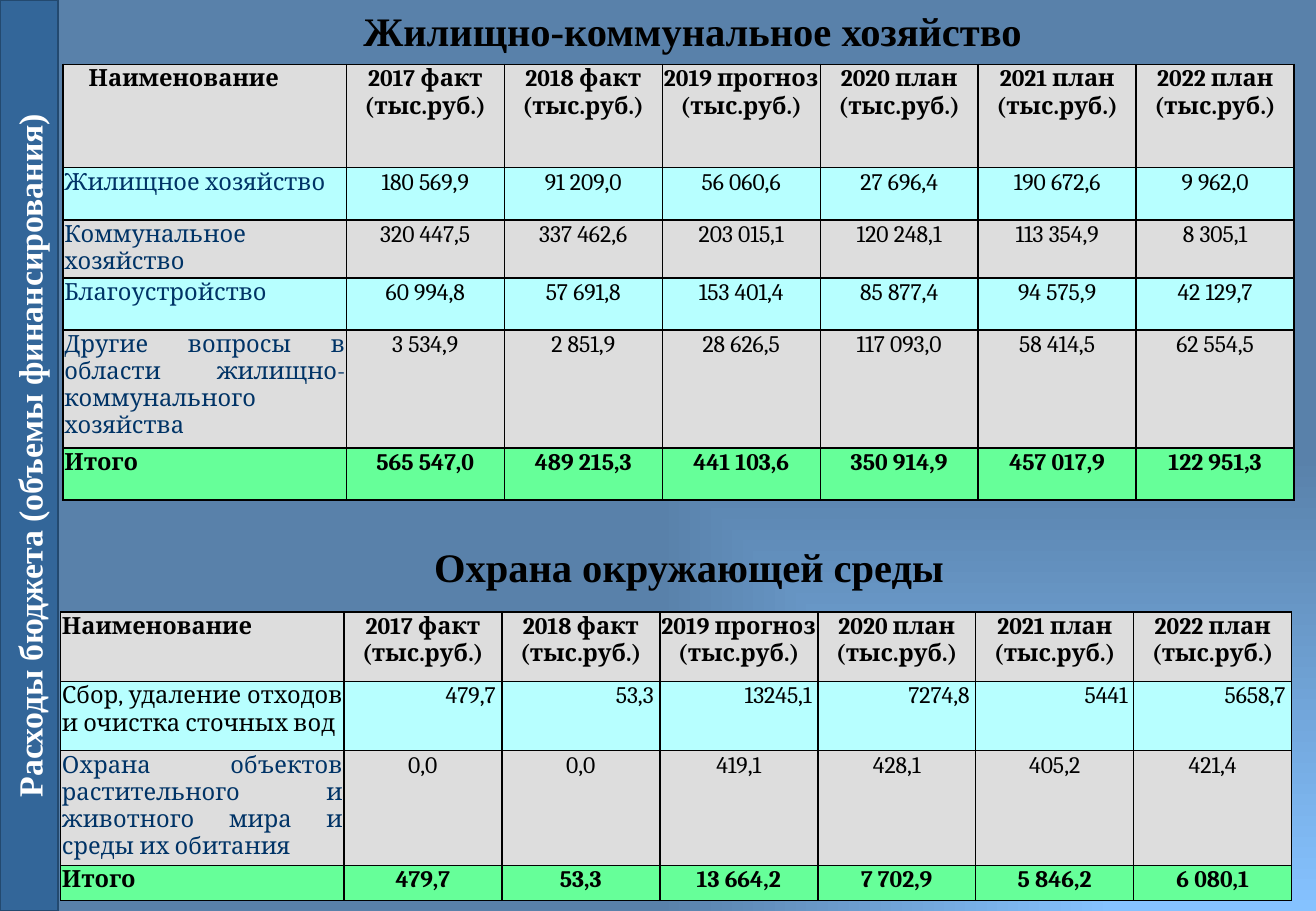
from dataclasses import dataclass

from lxml.etree import SubElement
from pptx import Presentation
from pptx.dml.color import RGBColor
from pptx.enum.shapes import MSO_SHAPE
from pptx.enum.text import MSO_ANCHOR, MSO_AUTO_SIZE, PP_ALIGN
from pptx.oxml import parse_xml
from pptx.oxml.ns import nsdecls, qn
from pptx.slide import Slide
from pptx.table import _Cell
from pptx.text.text import TextFrame
from pptx.util import Inches, Pt


@dataclass(frozen=True)
class Theme:
    heading_font: str = "Times New Roman"
    table_font: str = "Cambria"
    heading_size: int = 24
    sidebar_size: int = 20
    table_size: int = 14
    black: str = "000000"
    white: str = "FFFFFF"
    navy: str = "003366"
    sidebar: str = "336699"
    sidebar_line: str = "23496F"
    gray: str = "DDDDDD"
    cyan: str = "B7FFFF"
    green: str = "66FF99"
    glow: str = "85C2FF"
    backdrop: str = "5981AA"


@dataclass(frozen=True)
class Row:
    height: float
    name: str
    values: list[str]
    name_color: str = Theme.black
    value_align: PP_ALIGN = PP_ALIGN.CENTER


@dataclass(frozen=True)
class Section:
    title: str
    title_left: float
    title_top: float
    table_left: float
    table_top: float
    header_height: float
    header_indent: float
    rows: list[Row]


THEME = Theme()
SLIDE_WIDTH, SLIDE_HEIGHT = 10.83, 7.5
SIDEBAR_WIDTH = 0.48
NAME_WIDTH, VALUE_WIDTH = 2.33, 1.3
CELL_MARGIN, RIGHT_ALIGNED_MARGIN = 0.01, 0.05
PERIODS = ["2017 факт", "2018 факт", "2019 прогноз", "2020 план", "2021 план", "2022 план"]

SECTIONS = [
    Section("Жилищно-коммунальное хозяйство", 0.81, 0, 0.52, 0.53, 0.85, 0.21, [
        Row(0.43, "Жилищное хозяйство",
            ["180 569,9", "91 209,0", "56 060,6", "27 696,4", "190 672,6", "9 962,0"], THEME.navy),
        Row(0.43, "Коммунальное хозяйство",
            ["320 447,5", "337 462,6", "203 015,1", "120 248,1", "113 354,9", "8 305,1"], THEME.navy),
        Row(0.43, "Благоустройство",
            ["60 994,8", "57 691,8", "153 401,4", "85 877,4", "94 575,9", "42 129,7"], THEME.navy),
        Row(0.97, "Другие вопросы в области жилищно-коммунального хозяйства",
            ["3 534,9", "2 851,9", "28 626,5", "117 093,0", "58 414,5", "62 554,5"], THEME.navy),
        Row(0.43, "Итого",
            ["565 547,0", "489 215,3", "441 103,6", "350 914,9", "457 017,9", "122 951,3"]),
    ]),
    Section("Охрана окружающей среды", 0.78, 4.41, 0.5, 5.04, 0.57, CELL_MARGIN, [
        Row(0.57, "Сбор, удаление отходов и очистка сточных вод",
            ["479,7", "53,3", "13245,1", "7274,8", "5441", "5658,7"], value_align=PP_ALIGN.RIGHT),
        Row(0.85, "Охрана объектов растительного и животного мира и среды их обитания",
            ["0,0", "0,0", "419,1", "428,1", "405,2", "421,4"], THEME.navy),
        Row(0.29, "Итого", ["479,7", "53,3", "13 664,2", "7 702,9", "5 846,2", "6 080,1"]),
    ]),
]


def set_text(frame: TextFrame, text: str, font_name: str, size: int, color: str,
             bold: bool, align: PP_ALIGN) -> None:
    frame.text = text
    frame.word_wrap = True
    paragraph = frame.paragraphs[0]
    paragraph.alignment = align
    font = paragraph.runs[0].font
    font.name = font_name
    font.size = Pt(size)
    font.bold = bold
    font.color.rgb = RGBColor.from_string(color)


def set_background(slide: Slide) -> None:
    """Fill the slide with a glow that spreads from its bottom right corner."""
    slide.background.fill.solid()
    properties = slide.background.fill._xPr
    properties.replace(properties.find(qn("a:solidFill")), parse_xml(
        f'<a:gradFill {nsdecls("a")} rotWithShape="1"><a:gsLst>'
        f'<a:gs pos="0"><a:srgbClr val="{THEME.glow}"><a:alpha val="29000"/></a:srgbClr></a:gs>'
        f'<a:gs pos="100000"><a:srgbClr val="{THEME.backdrop}"/></a:gs></a:gsLst>'
        '<a:path path="rect"><a:fillToRect l="100000" t="100000"/></a:path></a:gradFill>'))


def add_sidebar(slide: Slide, text: str) -> None:
    offset = (SLIDE_HEIGHT - SIDEBAR_WIDTH) / 2
    shape = slide.shapes.add_shape(MSO_SHAPE.RECTANGLE, Inches(-offset), Inches(offset),
                                   Inches(SLIDE_HEIGHT), Inches(SIDEBAR_WIDTH))
    shape.rotation = 270
    shape.shadow.inherit = False
    shape.fill.solid()
    shape.fill.fore_color.rgb = RGBColor.from_string(THEME.sidebar)
    shape.line.color.rgb = RGBColor.from_string(THEME.sidebar_line)
    shape.line.width = Pt(1)
    shape.text_frame.vertical_anchor = MSO_ANCHOR.MIDDLE
    set_text(shape.text_frame, text, THEME.heading_font, THEME.sidebar_size, THEME.white,
             True, PP_ALIGN.CENTER)


def add_title(slide: Slide, section: Section) -> None:
    box = slide.shapes.add_textbox(Inches(section.title_left), Inches(section.title_top),
                                   Inches(9.78), Inches(0.5))
    box.text_frame.vertical_anchor = MSO_ANCHOR.MIDDLE
    set_text(box.text_frame, section.title, THEME.heading_font, THEME.heading_size, THEME.black,
             True, PP_ALIGN.CENTER)
    box.text_frame.auto_size = MSO_AUTO_SIZE.SHAPE_TO_FIT_TEXT


def fill_cell(cell: _Cell, text: str, fill: str, color: str, bold: bool, align: PP_ALIGN,
              left_margin: float = CELL_MARGIN) -> None:
    """Write a cell and give it margins, a black border and a fill."""
    right_margin = RIGHT_ALIGNED_MARGIN if align == PP_ALIGN.RIGHT else CELL_MARGIN
    cell.margin_left, cell.margin_right = Inches(left_margin), Inches(right_margin)
    cell.margin_top, cell.margin_bottom = Inches(CELL_MARGIN), 0
    set_text(cell.text_frame, text, THEME.table_font, THEME.table_size, color, bold, align)
    properties = cell._tc.get_or_add_tcPr()
    for side in ("a:lnL", "a:lnR", "a:lnT", "a:lnB"):
        line = SubElement(properties, qn(side), w=str(Pt(1)))
        SubElement(SubElement(line, qn("a:solidFill")), qn("a:srgbClr"), val=THEME.black)
    cell.fill.solid()
    cell.fill.fore_color.rgb = RGBColor.from_string(fill)


def add_budget_table(slide: Slide, section: Section) -> None:
    header = Row(section.header_height, "Наименование",
                 [f"{period} (тыс.руб.)" for period in PERIODS])
    rows = [header, *section.rows]
    widths = [NAME_WIDTH] + [VALUE_WIDTH] * len(PERIODS)
    table = slide.shapes.add_table(
        len(rows), len(widths), Inches(section.table_left), Inches(section.table_top),
        Inches(sum(widths)), Inches(sum(row.height for row in rows))).table
    table.first_row = table.horz_banding = False
    for column, width in zip(table.columns, widths):
        column.width = Inches(width)
    for index, row in enumerate(rows):
        is_header, is_total = index == 0, index == len(rows) - 1
        bold = is_header or is_total
        fill = THEME.green if is_total else (THEME.gray, THEME.cyan)[index % 2]
        table.rows[index].height = Inches(row.height)
        fill_cell(table.cell(index, 0), row.name, fill, row.name_color, bold,
                  PP_ALIGN.LEFT if is_header else PP_ALIGN.JUSTIFY,
                  section.header_indent if is_header else CELL_MARGIN)
        for column_index, value in enumerate(row.values, start=1):
            fill_cell(table.cell(index, column_index), value, fill, THEME.black, bold,
                      row.value_align)


def main() -> None:
    presentation = Presentation()
    presentation.slide_width = Inches(SLIDE_WIDTH)
    presentation.slide_height = Inches(SLIDE_HEIGHT)
    slide = presentation.slides.add_slide(presentation.slide_layouts[6])
    set_background(slide)
    add_sidebar(slide, "Расходы бюджета (объемы финансирования)")
    for section in SECTIONS:
        add_title(slide, section)
        add_budget_table(slide, section)
    presentation.save("out.pptx")


if __name__ == "__main__":
    main()
